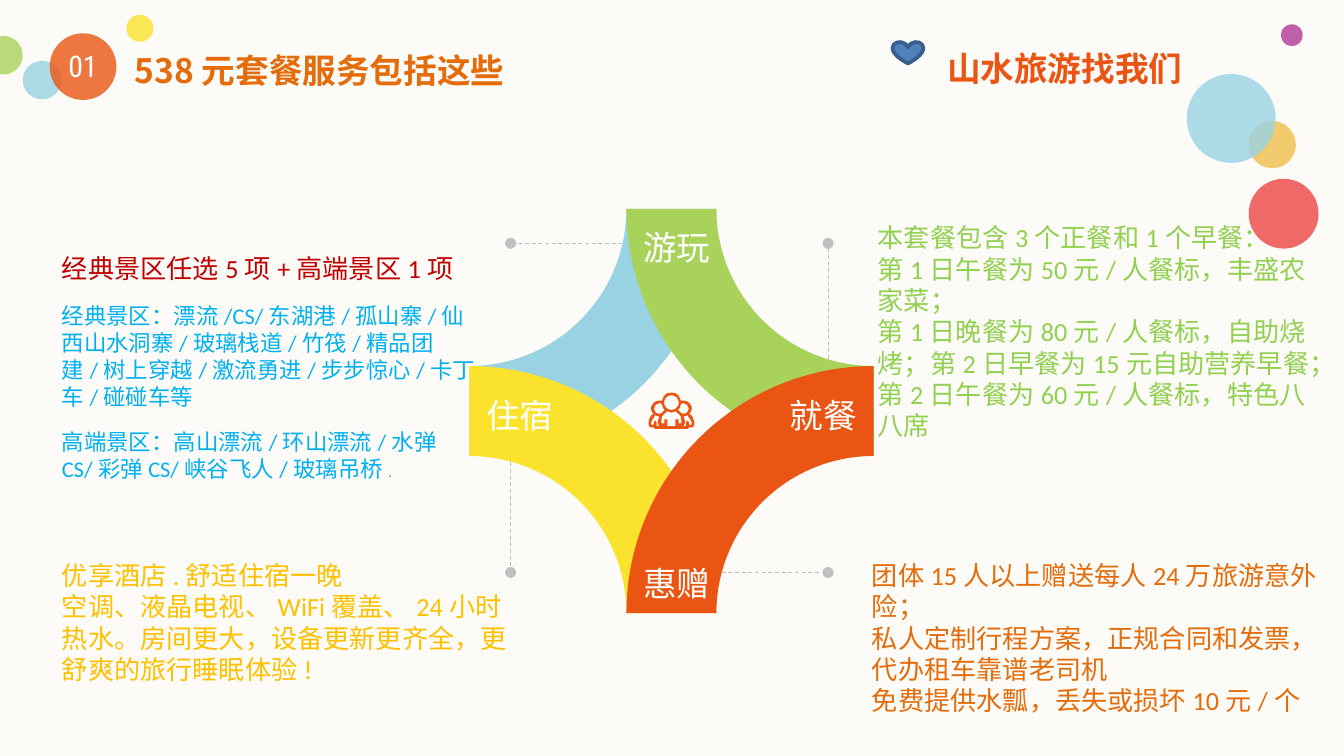
import math

import pptx
import pptx.dml.color
import pptx.enum.dml
import pptx.enum.shapes
import pptx.enum.text
import pptx.oxml
import pptx.oxml.ns
import pptx.util

Cm = pptx.util.Cm
Pt = pptx.util.Pt
SHAPE = pptx.enum.shapes.MSO_SHAPE
ALIGN = pptx.enum.text.PP_ALIGN
ANCHOR = pptx.enum.text.MSO_ANCHOR
AUTO_SIZE = pptx.enum.text.MSO_AUTO_SIZE

BLUE, YELLOW, GREEN, ORANGE = "98D2E3", "FBE22D", "A9D25A", "EA5514"
WHITE, DARK_ORANGE, GREY = "FFFFFF", "E46C0A", "C0C0C0"


def color(hex_text):
    return pptx.dml.color.RGBColor.from_string(hex_text)


def add_child(parent, tag, **attributes):
    child = pptx.oxml.ns.qn(tag)
    element = parent.makeelement(child, attributes)
    parent.append(element)
    return element


def arc(center_x, center_y, radius, start, end, steps=48):
    """Points along an arc; degrees run clockwise from the right."""
    angles = [math.radians(start + (end - start) * i / steps) for i in range(steps + 1)]
    return [(center_x + radius * math.cos(a), center_y + radius * math.sin(a)) for a in angles]


def mirror(points):
    return [(-x, y) for x, y in reversed(points)]


def write_text(shape, lines, size=14, font="Calibri", fill=WHITE, bold=False,
               align=ALIGN.LEFT, gap=0, inset=True, wrap=True):
    """Fill a shape with lines; a line is a string or a list of (text, overrides)."""
    frame = shape.text_frame
    frame.word_wrap = wrap
    frame.auto_size = AUTO_SIZE.SHAPE_TO_FIT_TEXT
    frame.vertical_anchor = ANCHOR.TOP
    if not inset:
        frame.margin_left = frame.margin_right = frame.margin_top = frame.margin_bottom = 0
    for index, line in enumerate(lines):
        paragraph = frame.add_paragraph() if index else frame.paragraphs[0]
        paragraph.alignment = align
        paragraph.space_before = Pt(gap if index else 0)
        for text, changes in [(line, {})] if isinstance(line, str) else line:
            run = paragraph.add_run()
            run.text = text
            run.font.name = font
            run.font.bold = bold
            run.font.size = Pt(changes.get("size", size))
            run.font.color.rgb = color(changes.get("fill", fill))


class SlideBuilder:
    def __init__(self, slide, background):
        self.slide = slide
        self.shapes = slide.shapes
        slide.background.fill.solid()
        slide.background.fill.fore_color.rgb = color(background)

    def paint(self, shape, fill, opacity=100):
        shape.shadow.inherit = False
        shape.fill.solid()
        shape.fill.fore_color.rgb = color(fill)
        shape.line.fill.background()
        if opacity < 100:
            solid = shape.fill._xPr.find(pptx.oxml.ns.qn("a:solidFill"))
            add_child(solid[0], "a:alpha", val=str(opacity * 1000))
        return shape

    def preset(self, kind, left, top, width, height, fill, opacity=100):
        shape = self.shapes.add_shape(kind, Cm(left), Cm(top), Cm(width), Cm(height))
        return self.paint(shape, fill, opacity)

    def outline(self, contours, fill, unit=1.0, left=0, top=0):
        """Closed contours, given in units of so many centimetres."""
        scaled = [[(Cm(left + x * unit), Cm(top + y * unit)) for x, y in points]
                  for points in contours]
        builder = self.shapes.build_freeform(*scaled[0][0])
        for index, points in enumerate(scaled):
            if index:
                builder.move_to(*points[0])
            builder.add_line_segments(points[1:], close=True)
        return self.paint(builder.convert_to_shape(), fill)

    def leader(self, x1, y1, x2, y2):
        line = self.shapes.add_connector(
            pptx.enum.shapes.MSO_CONNECTOR.STRAIGHT, Cm(x1), Cm(y1), Cm(x2), Cm(y2))
        line.line.color.rgb = color(GREY)
        line.line.width = Pt(0.5)
        line.line.dash_style = pptx.enum.dml.MSO_LINE.DASH
        add_child(line.line._get_or_add_ln(), "a:tailEnd", type="oval")
        add_child(line._element.spPr, "a:effectLst")

    def text(self, left, top, width, height, lines, **style):
        box = self.shapes.add_textbox(Cm(left), Cm(top), Cm(width), Cm(height))
        write_text(box, lines, **style)

    def title(self, left, top, width, height, text, **style):
        title = self.shapes.title
        title.left, title.top, title.width, title.height = map(Cm, (left, top, width, height))
        write_text(title, [text], **style)


def main():
    presentation = pptx.Presentation()
    presentation.slide_width, presentation.slide_height = Cm(25.4), Cm(14.29)
    slide = presentation.slides.add_slide(presentation.slide_layouts[5])
    builder = SlideBuilder(slide, "FCFBF7")

    # Four interlocking quarter rings
    center_x, center_y, reach = 12.69, 7.77, 3.82
    for side_x, side_y, start, fill in [(-1, -1, 0, BLUE), (-1, 1, 270, YELLOW),
                                        (1, -1, 90, GREEN), (1, 1, 180, ORANGE)]:
        x, y = center_x + side_x * reach, center_y + side_y * reach
        ring = arc(x, y, 4.67, start, start + 90) + arc(x, y, 2.97, start + 90, start)
        builder.outline([ring], fill)

    # People icon: right halves, mirrored about its axis
    group = [(0, 0), (3, 0.5), (5.5, 2.5), (7, 6), (9, 6), (11.5, 6.5), (13.5, 8), (15, 10.5),
             (15.2, 12), (14.7, 14), (13.3, 16), (15, 17), (16.3, 19.5), (17, 22), (17, 24),
             (16.3, 25.5), (15, 26), (13.3, 26), (12, 27), (0, 27)]
    body = [(0, 15), (3, 14), (6, 16.5), (7, 18), (7.5, 21), (7.5, 23), (5.3, 23),
            (5.3, 20), (3, 20), (3, 25), (0, 25)]
    side_head = [(7, 9), (8, 8), (9, 8), (11.7, 9.2), (13, 12), (11.7, 15), (9, 16),
                 (7, 15), (5, 13), (6.2, 11.5)]
    side_body = [(11, 25), (11, 22), (12, 21), (13, 22), (13, 24), (15, 24), (15, 22),
                 (14, 20), (12, 17), (9, 18), (10, 21), (10, 23), (9, 25), (8, 25)]
    builder.outline([group + mirror(group), body + mirror(body),
                     arc(0, 7.5, 5.4, 0, 360), side_head, mirror(side_head),
                     side_body, mirror(side_body)], ORANGE, 0.0254, center_x, 7.42)

    # Dashed leaders
    left_x, right_x, top_y, bottom_y = 9.65, 15.65, 4.6, 10.82
    builder.leader(11.76, top_y, left_x, top_y)
    builder.leader(left_x, 8.74, left_x, bottom_y)
    builder.leader(13.64, bottom_y, right_x, bottom_y)
    builder.leader(right_x, 6.78, right_x, top_y)

    # Descriptions on the right
    builder.text(16.59, 4.19, 8.53, 3, [
        "本套餐包含3个正餐和1个早餐：",
        "第1日午餐为50元/人餐标，丰盛农家菜；",
        "第1日晚餐为80元/人餐标，自助烧烤；第2日早餐为15元自助营养早餐；",
        "第2日午餐为60元/人餐标，特色八八席"], fill="92D050", inset=False)
    builder.text(16.48, 10.57, 8.84, 3, [
        "团体15人以上赠送每人24万旅游意外险；",
        "私人定制行程方案，正规合同和发票，代办租车靠谱老司机",
        "免费提供水瓢，丢失或损坏10元/个"], fill=DARK_ORANGE, inset=False)

    # Header with its bubbles
    for left, top, size, fill in [(2.39, 0.28, 0.51, YELLOW), (-0.3, 0.68, 0.73, GREEN),
                                  (0.43, 1.15, 0.73, BLUE), (0.94, 0.63, 1.26, ORANGE)]:
        builder.preset(SHAPE.OVAL, left, top, size, size, fill, 80)
    builder.text(1.11, 0.91, 0.92, 0.69, ["01"], size=16, font="Roboto Condensed",
                 align=ALIGN.CENTER, inset=False)
    builder.title(2.54, 0.94, 7.72, 0.76, "538元套餐服务包括这些", size=18,
                  font="Noto Sans CJK JP", fill=DARK_ORANGE, bold=True, inset=False)

    # Ring labels
    for left, top, label in [(11.91, 4.17, "游玩"), (14.68, 7.34, "就餐"),
                             (8.94, 7.34, "住宿"), (11.91, 10.52, "惠赠")]:
        builder.text(left, top, 1.8, 1.02, [label], size=18, wrap=False)

    # Bubbles, slogan and heart at the top right
    for left, top, size, fill, opacity in [
            (24.21, 0.46, 0.41, "B03896", 80), (23.6, 2.29, 0.89, "F0CA6C", 100),
            (23.6, 3.38, 1.32, "EB4544", 80), (22.43, 1.4, 1.68, BLUE, 80)]:
        builder.preset(SHAPE.OVAL, left, top, size, size, fill, opacity)
    builder.text(17.65, 0.79, 5.16, 1.02, ["山水旅游找我们"], size=18, fill=ORANGE,
                 bold=True, wrap=False)
    heart = builder.preset(SHAPE.HEART, 16.87, 0.79, 0.58, 0.41, "4F81BD")
    heart.line.color.rgb = color("3A5F8C")
    heart.line.width = Pt(2)

    # Descriptions on the left
    builder.text(1.17, 10.57, 8.48, 2.39, [
        "优享酒店.舒适住宿一晚",
        "空调、液晶电视、WiFi覆盖、24小时热水。房间更大，设备更新更齐全，更舒爽的旅行睡眠体验!"],
        fill="FFC000", inset=False)
    builder.text(1.17, 4.78, 7.92, 3.84, [
        [("经典景区任选5项+高端景区1项", {"size": 14, "fill": "C00000"})],
        "经典景区：漂流/CS/东湖港/孤山寨/仙西山水洞寨/玻璃栈道/竹筏/精品团建/树上穿越/激流勇进/步步惊心/卡丁车/碰碰车等",
        [("高端景区：高山漂流/环山漂流/水弹CS/彩弹CS/峡谷飞人/玻璃吊桥", {}),
         (".", {"size": 8, "fill": "7F7F7F"})]],
        size=12, fill="00B0F0", gap=9.7, inset=False)

    presentation.save("out.pptx")


if __name__ == "__main__":
    main()
